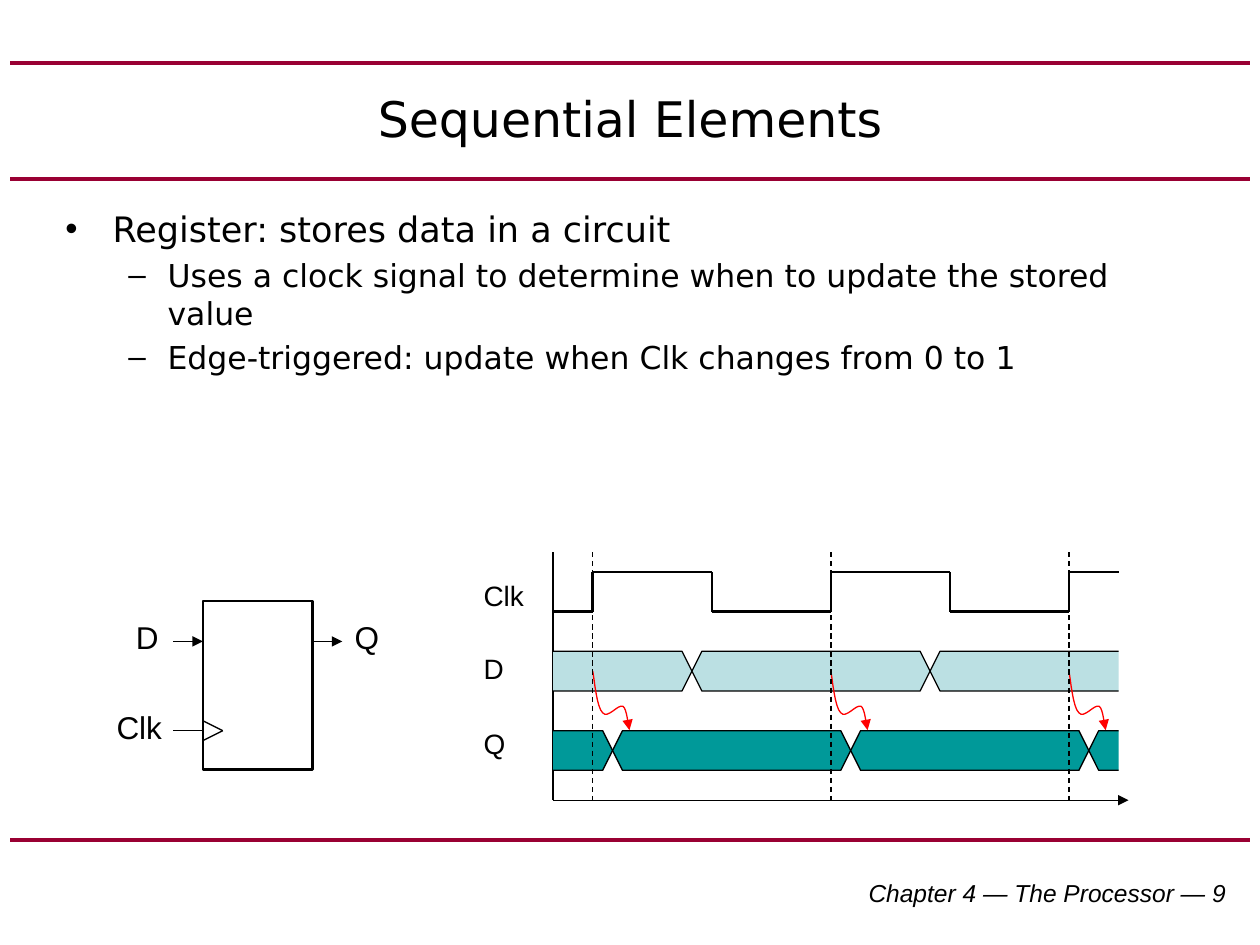
from pptx import Presentation
from pptx.dml.color import RGBColor
from pptx.enum.dml import MSO_LINE
from pptx.enum.shapes import MSO_CONNECTOR, MSO_SHAPE
from pptx.enum.text import MSO_ANCHOR, PP_ALIGN
from pptx.oxml.ns import qn
from pptx.util import Cm, Pt
from lxml.etree import SubElement

BLACK = RGBColor(0x00, 0x00, 0x00)
CRIMSON = RGBColor(0x99, 0x00, 0x33)
RED = RGBColor(0xFF, 0x00, 0x00)
PALE_TEAL = RGBColor(0xBB, 0xE0, 0xE3)
TEAL = RGBColor(0x00, 0x99, 0x99)
SANS = "DejaVu Sans"
ARIAL = "Arial"

LEFT, RIGHT, TOP = 11.15, 22.55, 11.13
PERIOD, HEIGHT, SLANT = 4.8, 0.8, 0.2
RISES = [LEFT + 0.8 + PERIOD * count for count in range(3)]
HIGH, DATA_TOP, OUTPUT_TOP, AXIS = TOP + 0.4, TOP + 2, TOP + 3.6, TOP + 5
LOW = HIGH + HEIGHT
CURVES = [
    [(0, 0), (0.03, 0.15), (0.08, 0.74), (0.2, 0.84)],
    [(0.2, 0.84), (0.3, 0.97), (0.51, 0.66), (0.61, 0.71)],
    [(0.61, 0.71), (0.69, 0.76), (0.71, 1.09), (0.74, 1.19)],
]


def bezier(points, t):
    weights = [(1 - t) ** 3, 3 * t * (1 - t) ** 2, 3 * t * t * (1 - t), t ** 3]
    return tuple(sum(w * point[axis] for w, point in zip(weights, points)) for axis in (0, 1))


class Painter:
    def __init__(self, page):
        self.page = page

    def stroke(self, shape, color, width, arrow=False):
        shape.line.color.rgb = color
        shape.line.width = Pt(width)
        if arrow:
            SubElement(shape.line._get_or_add_ln(), qn("a:tailEnd"), type="triangle")

    def line(self, x1, y1, x2, y2, width=0.75, color=BLACK, arrow=False, dashed=False):
        connector = self.page.shapes.add_connector(
            MSO_CONNECTOR.STRAIGHT, Cm(x1), Cm(y1), Cm(x2), Cm(y2))
        if dashed:
            connector.line.dash_style = MSO_LINE.DASH
        self.stroke(connector, color, width, arrow)
        SubElement(connector._element.spPr, qn("a:effectLst"))

    def rectangle(self, x, y, width, height):
        shape = self.page.shapes.add_shape(
            MSO_SHAPE.RECTANGLE, Cm(x), Cm(y), Cm(width), Cm(height))
        shape.shadow.inherit = False
        shape.fill.background()
        self.stroke(shape, BLACK, 1.5)

    def outline(self, points, color, fill=None, close=False, arrow=False):
        corners = [(Cm(x), Cm(y)) for x, y in points]
        builder = self.page.shapes.build_freeform(*corners[0])
        builder.add_line_segments(corners[1:], close=close)
        shape = builder.convert_to_shape()
        shape.shadow.inherit = False
        if fill is None:
            shape.fill.background()
        else:
            shape.fill.solid()
            shape.fill.fore_color.rgb = fill
        self.stroke(shape, color, 0.75, arrow)

    def signal(self, top, crossings, fill):
        middle, bottom = top + HEIGHT / 2, top + HEIGHT
        edges = [LEFT, *crossings, RIGHT]
        for start, end in zip(edges, edges[1:]):
            if start == LEFT:
                points = [(start, top), (end - SLANT, top), (end, middle),
                          (end - SLANT, bottom), (start, bottom)]
            elif end == RIGHT:
                points = [(end, top), (start + SLANT, top), (start, middle),
                          (start + SLANT, bottom), (end, bottom)]
            else:
                points = [(start, middle), (start + SLANT, top), (end - SLANT, top),
                          (end, middle), (end - SLANT, bottom), (start + SLANT, bottom)]
            self.outline(points, BLACK, fill, close=start != LEFT and end != RIGHT)

    def transfer(self, x, y):
        offsets = [(0, 0)]
        for curve in CURVES:
            offsets += [bezier(curve, step / 8) for step in range(1, 9)]
        self.outline([(x + dx, y + dy) for dx, dy in offsets], RED, arrow=True)

    def frame(self, x, y, width, height, wrap=True):
        box = self.page.shapes.add_textbox(Cm(x), Cm(y), Cm(width), Cm(height))
        box.text_frame.word_wrap = wrap
        return box.text_frame

    def span(self, para, words, size, font, italic=False):
        span = para.add_run()
        span.text = words
        span.font.size = Pt(size)
        span.font.name = font
        span.font.italic = italic
        span.font.color.rgb = BLACK

    def text(self, words, x, y, width, height, size, font=ARIAL,
             align=PP_ALIGN.LEFT, wrap=False, italic=False):
        frame = self.frame(x, y, width, height, wrap)
        frame.vertical_anchor = MSO_ANCHOR.MIDDLE if align == PP_ALIGN.CENTER else MSO_ANCHOR.TOP
        para = frame.paragraphs[0]
        para.alignment = align
        self.span(para, words, size, font, italic)

    def bullets(self, items, x, y, width, height):
        styles = [("•", 20, 0.95, 0.95), ("–", 18, 2.06, 0.79)]
        frame = self.frame(x, y, width, height)
        for index, (level, words) in enumerate(items):
            mark, size, margin, hang = styles[level]
            para = frame.add_paragraph() if index else frame.paragraphs[0]
            para.level = level
            if index:
                para.space_before = Pt(size * 0.2)
            properties = para._p.get_or_add_pPr()
            properties.set("marL", str(Cm(margin)))
            properties.set("indent", str(-Cm(hang)))
            SubElement(properties, qn("a:buFont"), typeface=ARIAL)
            SubElement(properties, qn("a:buChar"), char=mark)
            self.span(para, words, size, SANS)


def draw_register(painter):
    left, right, data_y, clock_y = 4.09, 6.3, 12.93, 14.73
    painter.rectangle(left, 12.12, right - left, 3.4)
    painter.line(left - 0.6, data_y, left, data_y, 1, arrow=True)
    painter.line(left - 0.6, clock_y, left, clock_y)
    painter.line(right, data_y, right + 0.6, data_y, 1, arrow=True)
    for words, x, y, width in [("D", 2.49, 12.34, 0.97), ("Clk", 2.1, 14.15, 1.42),
                               ("Q", 6.9, 12.34, 1.02)]:
        painter.text(words, x, y, width, 1.02, 18)
    for offset in (-0.2, 0.2):
        painter.line(left, clock_y + offset, left + 0.4, clock_y)


def draw_timing(painter):
    painter.line(LEFT, LOW, RISES[0], LOW, 1.5)
    for rise in RISES:
        fall = rise + PERIOD / 2
        painter.line(rise, HIGH, rise, LOW, 1.5)
        painter.line(rise, HIGH, min(fall, RIGHT), HIGH, 1.5)
        if fall < RIGHT:
            painter.line(fall, HIGH, fall, LOW, 1.5)
            painter.line(fall, LOW, rise + PERIOD, LOW, 1.5)
    painter.line(LEFT, AXIS, RIGHT + 0.2, AXIS, arrow=True)
    painter.line(LEFT, AXIS, LEFT, TOP)
    for words, y, width in [("Clk", 11.53, 1.32), ("D", 13, 0.91), ("Q", 14.53, 0.97)]:
        painter.text(words, 9.5, y, width, 0.94, 16)
    painter.signal(DATA_TOP, [rise + 2 for rise in RISES[:2]], PALE_TEAL)
    painter.signal(OUTPUT_TOP, [rise + 0.4 for rise in RISES], TEAL)
    for rise in RISES:
        painter.transfer(rise, DATA_TOP + HEIGHT / 2)
        painter.line(rise, TOP, rise, AXIS, dashed=True)


def main():
    deck = Presentation()
    deck.slide_width, deck.slide_height = Cm(25.4), Cm(19.05)
    painter = Painter(deck.slides.add_slide(deck.slide_layouts[6]))
    for y in (16.93, 3.6, 1.27):
        painter.line(0.21, y, 25.19, y, 2.25, CRIMSON)
    painter.text("Chapter 4 — The Processor — 9", 9.53, 17.58, 15.44, 0.85, 14,
                 align=PP_ALIGN.RIGHT, wrap=True, italic=True)
    painter.text("Sequential Elements", 1.27, 1.27, 22.86, 2.21, 28, SANS,
                 align=PP_ALIGN.CENTER, wrap=True)
    painter.bullets([
        (0, "Register: stores data in a circuit"),
        (1, "Uses a clock signal to determine when to update the stored value"),
        (1, "Edge-triggered: update when Clk changes from 0 to 1"),
    ], 1.07, 4.06, 22.99, 7.67)
    draw_register(painter)
    draw_timing(painter)
    deck.save("out.pptx")


if __name__ == "__main__":
    main()
